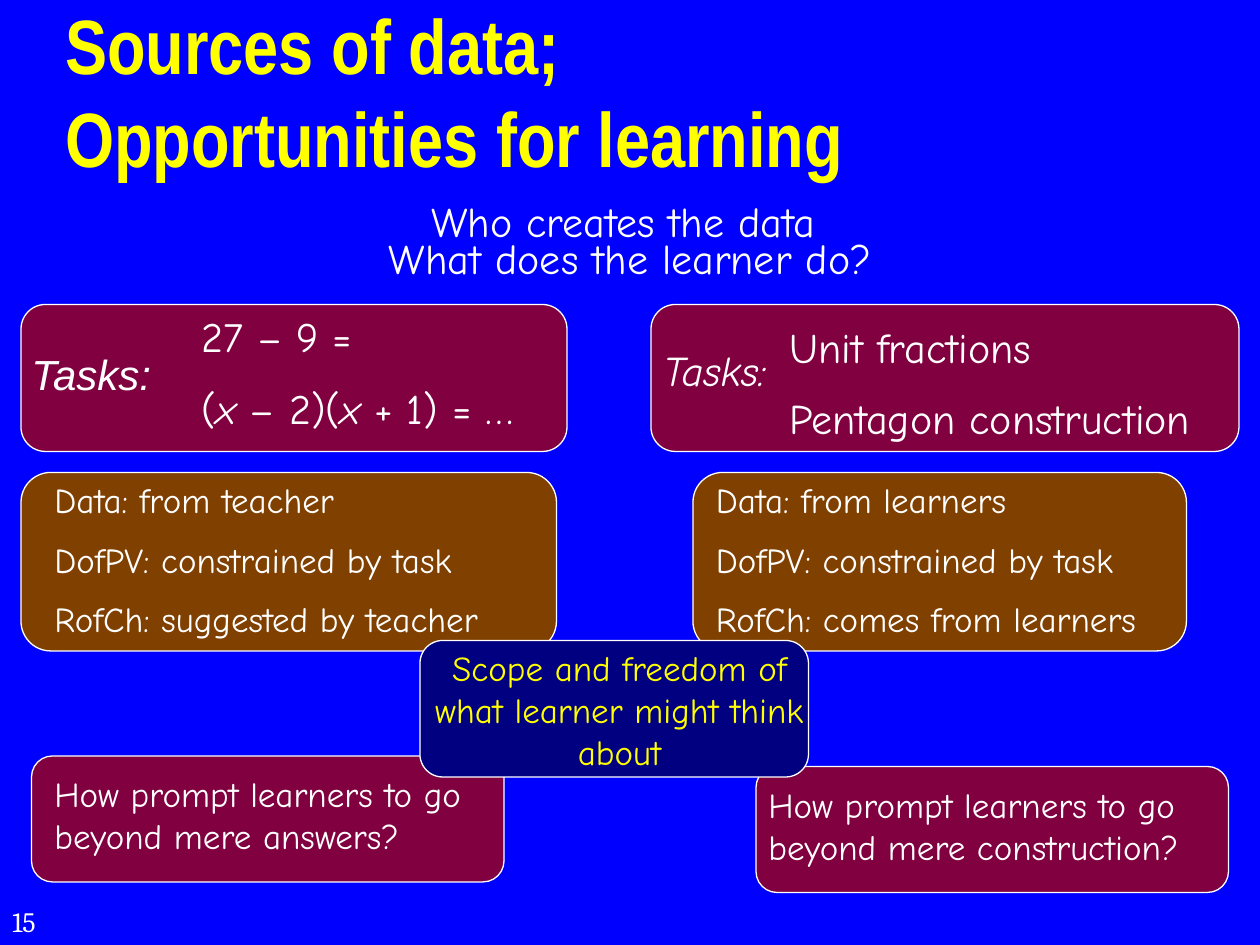
import pptx
import pptx.util
import pptx.dml.color
import pptx.enum.shapes
import pptx.enum.text

COLORS = {
    "background": "0000FF",
    "title": "FFFF00",
    "text": "FFFFFF",
    "task": "800040",
    "data": "804000",
    "scope": "000080",
}
PX = 7620
ALIGN = pptx.enum.text.PP_ALIGN


def px(*lengths):
    return [pptx.util.Emu(n * PX) for n in lengths]


def rgb(name):
    return pptx.dml.color.RGBColor.from_string(COLORS[name])


class Deck:
    font = "Comic Neue"

    def __init__(self, width, height):
        self.prs = pptx.Presentation()
        self.prs.slide_width, self.prs.slide_height = px(width, height)

    def add_slide(self):
        self.s = self.prs.slides.add_slide(self.prs.slide_layouts[5])
        fill = self.s.background.fill
        fill.solid()
        fill.fore_color.rgb = rgb("background")

    def style(self, p, size, color, font=None, bold=False, italic=False):
        f = p.font
        f.name = font or self.font
        f.size = pptx.util.Pt(size)
        f.bold, f.italic = bold, italic
        f.color.rgb = rgb(color)

    def title(self, box, text):
        sp = self.s.shapes.title
        sp.left, sp.top, sp.width, sp.height = px(*box)
        tf = sp.text_frame
        tf.auto_size = pptx.enum.text.MSO_AUTO_SIZE.NONE
        tf.vertical_anchor = pptx.enum.text.MSO_ANCHOR.BOTTOM
        p = tf.paragraphs[0]
        p.text = text
        p.alignment = ALIGN.LEFT
        self.style(p, 44, "title", "Arial Narrow", bold=True)

    def panel(self, box, color):
        kind = pptx.enum.shapes.MSO_SHAPE.ROUNDED_RECTANGLE
        sp = self.s.shapes.add_shape(kind, *px(*box))
        sp.shadow.inherit = False
        sp.fill.solid()
        sp.fill.fore_color.rgb = rgb(color)
        sp.line.color.rgb = rgb("text")
        sp.line.width = pptx.util.Pt(0.75)

    def text(self, box, lines, size=20, color="text", align=ALIGN.LEFT,
             font=None, italic=False, wrap=True):
        tf = self.s.shapes.add_textbox(*px(*box)).text_frame
        tf.word_wrap = wrap
        for i, line in enumerate(lines):
            p = tf.paragraphs[0]
            if i:
                p = tf.add_paragraph()
                p.space_before = pptx.util.Pt(size / 2)
            p.alignment = align
            self.style(p, size, color, font, italic=italic)
            for j, part in enumerate(line.split("*")):
                r = p.add_run()
                r.text = part
                if j % 2:
                    r.font.italic = True
        return tf


def main():
    deck = Deck(1200, 900)
    deck.add_slide()
    deck.text((0, 856, 60, 44), ["15"], 16, font="Cambria")
    deck.title((50, 35, 1020, 145), "Sources of data;\vOpportunities for learning")
    tf = deck.text((310, 180, 580, 94),
                   ["Who creates the data ", "What does the learner do?"],
                   24, align=ALIGN.CENTER)
    tf.paragraphs[1].line_spacing = 0.2

    for panel, box, lines in (
        ((20, 450, 510, 170), (40, 450, 520, 172),
         ["Data: from teacher", "DofPV: constrained by task",
          "RofCh: suggested by teacher"]),
        ((660, 450, 470, 170), (670, 450, 470, 172),
         ["Data: from learners", "DofPV: constrained by task",
          "RofCh: comes from learners"]),
    ):
        deck.panel(panel, "data")
        deck.text(box, lines)

    for left, top, text_left, subject in (
        (720, 730, 720, "construction"),
        (30, 720, 40, "answers"),
    ):
        deck.panel((left, top, 450, 120), "task")
        deck.text((text_left, top + 10, 450, 92),
                  [f"How prompt learners to go beyond mere {subject}?"])

    deck.panel((400, 610, 370, 130), "scope")
    deck.text((390, 610, 400, 132),
              ["Scope and freedom of what learner might think about"],
              color="title", align=ALIGN.CENTER)

    for panel, box, lines, label, font in (
        ((20, 290, 520, 140), (180, 290, 440, 132),
         ["27 – 9 =", "(*x* – 2)(*x* + 1) = …"], (18, 326, 142, 60), "Arial"),
        ((620, 290, 560, 140), (740, 300, 430, 132),
         ["Unit fractions", "Pentagon construction"], (620, 322, 136, 60), None),
    ):
        deck.panel(panel, "task")
        deck.text(box, lines, 24)
        deck.text(label, ["Tasks:"], 24, font=font, italic=True, wrap=False)

    deck.prs.save("out.pptx")


if __name__ == "__main__":
    main()
